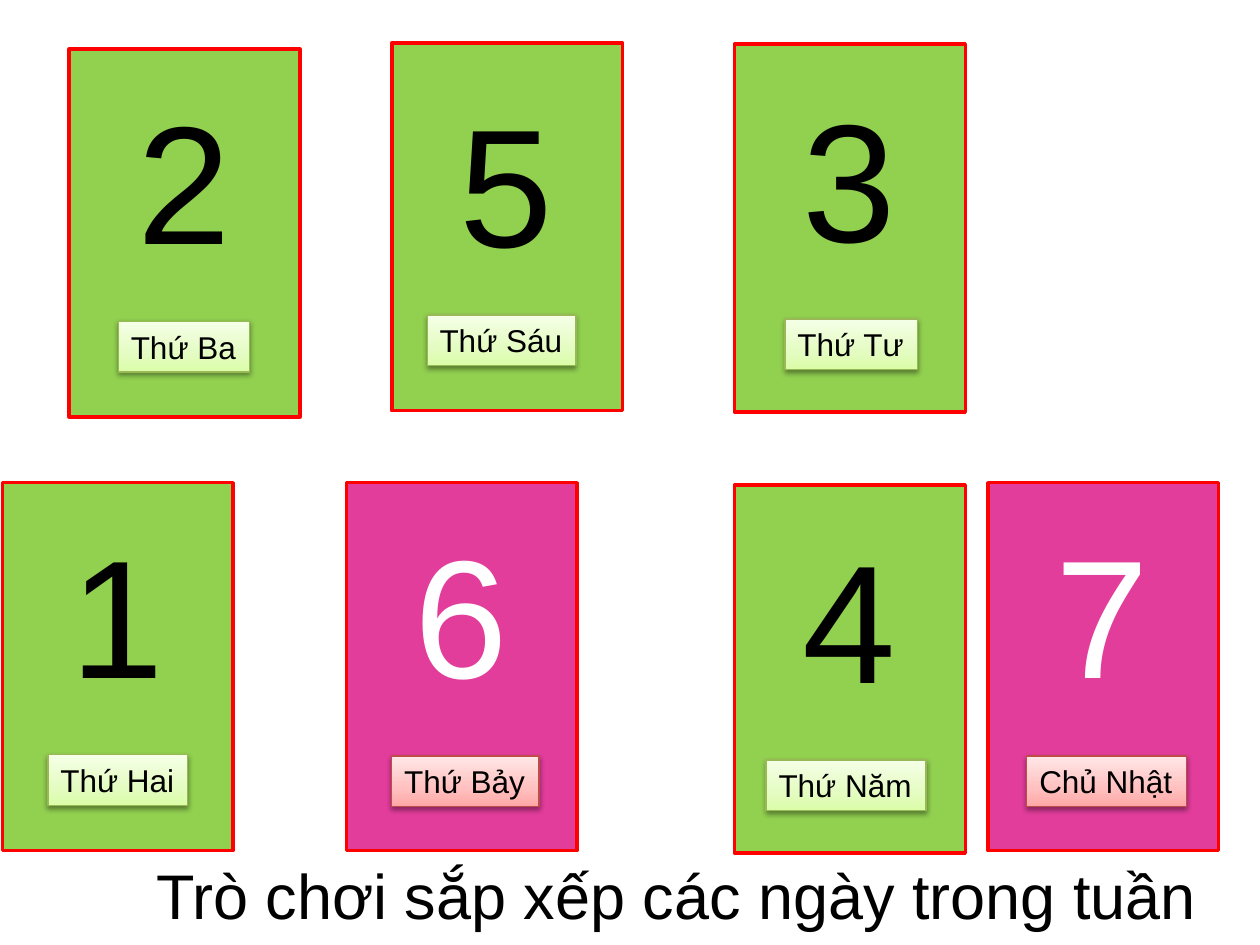
from dataclasses import dataclass

from lxml.etree import SubElement
from pptx import Presentation
from pptx.dml.color import RGBColor
from pptx.enum.shapes import MSO_SHAPE as Shape
from pptx.enum.text import MSO_ANCHOR as Anchor, MSO_AUTO_SIZE as AutoSize, PP_ALIGN as Align
from pptx.oxml.ns import qn
from pptx.util import Pt

CARD_WIDTH, CARD_HEIGHT = 131.8, 210.2
DIGIT_INSET, DIGIT_WIDTH, DIGIT_HEIGHT = 31.8, 68.4, 123.8
LABEL_HEIGHT = 29


def color(value):
    return RGBColor.from_string(value)


@dataclass
class Theme:
    card: str
    digit: str
    label_border: str
    label_stops: tuple  # (position in percent, colour)


WEEKDAY = Theme("92D050", "000000", "98B955",
                ((0, "DAFDA7"), (35, "E4FCC2"), (100, "F5FFE7")))
WEEKEND = Theme("E33D9C", "FFFFFF", "BF4C48",
                ((0, "FFA6A5"), (35, "FFC0BF"), (100, "FFE7E7")))


class WeekSlide:
    font = "Arial"
    ink = "000000"
    border = "FF0000"

    def __init__(self, slide):
        self.slide = slide

    def set_text(self, holder, text, size, ink):
        frame = holder.text_frame
        frame.text = text
        frame.word_wrap = False
        frame.auto_size = AutoSize.SHAPE_TO_FIT_TEXT
        frame.vertical_anchor = Anchor.TOP
        paragraph = frame.paragraphs[0]
        paragraph.alignment = Align.LEFT
        paragraph.font.name = self.font
        paragraph.font.size = Pt(size)
        paragraph.font.color.rgb = color(ink)

    def text(self, box, text, size, ink):
        holder = self.slide.shapes.add_textbox(*map(Pt, box))
        self.set_text(holder, text, size, ink)

    def shape(self, kind, box, border, weight):
        shape = self.slide.shapes.add_shape(kind, *map(Pt, box))
        shape.shadow.inherit = False
        shape.line.color.rgb = color(border)
        shape.line.width = Pt(weight)
        return shape

    def card(self, left, top, theme):
        box = (left, top, CARD_WIDTH, CARD_HEIGHT)
        card = self.shape(Shape.FLOWCHART_PROCESS, box, self.border, 2)
        card.fill.solid()
        card.fill.fore_color.rgb = color(theme.card)

    def label(self, box, text, theme):
        label = self.shape(Shape.RECTANGLE, box, theme.label_border, 0.75)
        self.gradient(label, theme.label_stops)
        self.soft_shadow(label)
        self.set_text(label, text, 18, self.ink)

    def gradient(self, shape, stops):
        shape.fill.gradient()
        shape.fill.gradient_angle = 90
        stop_list = shape.element.spPr.find(".//" + qn("a:gsLst"))
        stop_list.clear()
        for position, value in stops:
            stop = SubElement(stop_list, qn("a:gs"), pos=str(position * 1000))
            SubElement(stop, qn("a:srgbClr"), val=value)

    def soft_shadow(self, shape):
        effects = shape.element.spPr.find(qn("a:effectLst"))
        shadow = SubElement(effects, qn("a:outerShdw"), blurRad=str(Pt(3.1)),
                            dist=str(Pt(1.6)), dir="5400000", rotWithShape="0")
        tint = SubElement(shadow, qn("a:srgbClr"), val="000000")
        SubElement(tint, qn("a:alpha"), val="38000")


# Day, theme, card left and top, digit top, label left, top and width
DAYS = [
    ("Thứ Hai", WEEKDAY, 1.4, 275.8, 288, 27.4, 431.3, 79.9),
    ("Thứ Ba", WEEKDAY, 39.6, 28.1, 40.3, 67.7, 183.6, 74.9),
    ("Thứ Tư", WEEKDAY, 419.8, 25.2, 38.9, 448.6, 182.2, 75.6),
    ("Thứ Năm", WEEKDAY, 419.8, 277.2, 290.9, 437.8, 434.2, 91.4),
    ("Thứ Sáu", WEEKDAY, 223.9, 24.5, 41.8, 244.1, 180, 85),
    ("Thứ Bảy", WEEKEND, 198, 275.8, 288, 223.9, 432, 84.2),
    ("Chủ Nhật", WEEKEND, 564.5, 275.8, 288, 586.8, 432, 91.4),
]


def main():
    deck = Presentation()
    deck.slide_width, deck.slide_height = Pt(720), Pt(540)
    week = WeekSlide(deck.slides.add_slide(deck.slide_layouts[6]))

    # Day cards, numbered in the order of the week
    for number, day in enumerate(DAYS, start=1):
        name, theme, left, top, digit_top, label_left, label_top, label_width = day
        week.card(left, top, theme)
        digit_box = (left + DIGIT_INSET, digit_top, DIGIT_WIDTH, DIGIT_HEIGHT)
        week.text(digit_box, str(number), 96, theme.digit)
        week.label((label_left, label_top, label_width, LABEL_HEIGHT), name, theme)

    # Name of the game
    week.text((82.1, 486, 614.9, 51), "Trò chơi sắp xếp các ngày trong tuần", 36, week.ink)

    deck.save("out.pptx")


if __name__ == "__main__":
    main()
